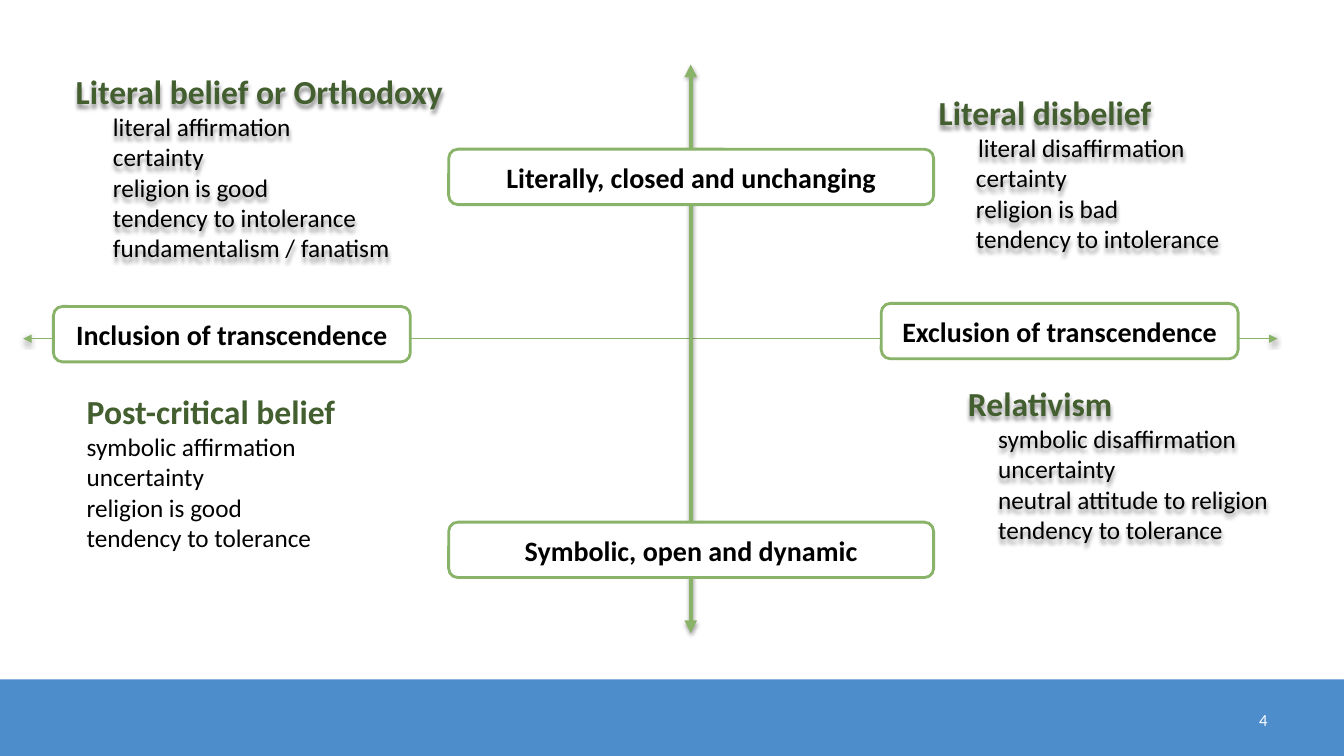
import dataclasses

import pptx
import pptx.dml.color
import pptx.enum.shapes
import pptx.enum.text
import pptx.oxml
import pptx.oxml.ns
import pptx.util

PX = 9144  # 100 px to the inch
FONT = "Calibri"
COLORS = {
    "white": "FFFFFF",
    "black": "000000",
    "bar": "4E8DCC",
    "axis": "89B368",
    "heading": "435E2F",
}
ALIGN = pptx.enum.text.PP_ALIGN
ANCHOR = pptx.enum.text.MSO_ANCHOR
SHAPE = pptx.enum.shapes.MSO_SHAPE


@dataclasses.dataclass
class Axis:
    start: tuple[int, int]
    end: tuple[int, int]
    width: float


@dataclasses.dataclass
class Pole:
    text: str
    left: int
    top: int
    width: int


@dataclasses.dataclass
class Quadrant:
    heading: str
    items: list[str]
    box: tuple[int, int, int, int]
    indents: list[int]
    anchor: ANCHOR = ANCHOR.MIDDLE
    heading_spacing: float = 1.0
    shadow: bool = True


AXES = [
    Axis((23, 336), (1267, 336), 0.75),
    Axis((685, 64), (685, 628), 3),
]
POLES = [
    Pole("Inclusion of transcendence", 53, 304, 354),
    Pole("Exclusion of transcendence", 874, 301, 354),
    Pole("Literally, closed and unchanging", 445, 148, 481),
    Pole("Symbolic, open and dynamic", 445, 518, 481),
]
QUADRANTS = [
    Quadrant(
        "Literal belief or Orthodoxy",
        ["literal affirmation", "certainty", "religion is good",
         "tendency to intolerance", "fundamentalism / fanatism"],
        (65, 78, 410, 167), [37] * 5, heading_spacing=1.2,
    ),
    Quadrant(
        "Post-critical belief",
        ["symbolic affirmation", "uncertainty", "religion is good",
         "tendency to tolerance"],
        (76, 383, 307, 172), [0] * 4, anchor=ANCHOR.TOP, shadow=False,
    ),
    Quadrant(
        "Literal disbelief",
        ["literal disaffirmation", "certainty", "religion is bad",
         "tendency to intolerance"],
        (921, 88, 384, 167), [39, 37, 37, 37],
    ),
    Quadrant(
        "Relativism",
        ["symbolic disaffirmation", "uncertainty",
         "neutral attitude to religion", "tendency to tolerance"],
        (950, 375, 379, 170), [30] * 4,
    ),
]


def rgb(name: str) -> pptx.dml.color.RGBColor:
    return pptx.dml.color.RGBColor.from_string(COLORS[name])


def add_run(p, text: str, size: int, color: str, bold: bool = False) -> None:
    r = p.add_run()
    r.text = text
    r.font.name = FONT
    r.font.size = pptx.util.Pt(size)
    r.font.bold = bold
    r.font.color.rgb = rgb(color)


def add_shadow(sp, blur: float, dist: float, alpha: int) -> None:
    """Append a soft shadow that falls straight down; blur and dist in points."""
    sp._element.spPr.append(pptx.oxml.parse_xml(
        f'<a:effectLst {pptx.oxml.ns.nsdecls("a")}>'
        f'<a:outerShdw blurRad="{pptx.util.Pt(blur)}" dist="{pptx.util.Pt(dist)}" '
        f'dir="5400000" rotWithShape="0"><a:srgbClr val="{COLORS["black"]}">'
        f'<a:alpha val="{alpha * 1000}"/></a:srgbClr></a:outerShdw></a:effectLst>'
    ))


def add_axis(s, axis: Axis) -> None:
    line = s.shapes.add_connector(
        pptx.enum.shapes.MSO_CONNECTOR.STRAIGHT,
        *(v * PX for v in axis.start + axis.end),
    )
    line.line.color.rgb = rgb("axis")
    line.line.width = pptx.util.Pt(axis.width)
    ln = line.line._get_or_add_ln()
    for end in ("headEnd", "tailEnd"):
        ln.append(pptx.oxml.parse_xml(
            f'<a:{end} {pptx.oxml.ns.nsdecls("a")} type="triangle"/>'
        ))
    add_shadow(line, 3.1, 1.7, 37)


def add_pole(s, pole: Pole) -> None:
    sp = s.shapes.add_shape(
        SHAPE.ROUNDED_RECTANGLE,
        pole.left * PX, pole.top * PX, pole.width * PX, 55 * PX,
    )
    sp.shadow.inherit = False
    sp.fill.solid()
    sp.fill.fore_color.rgb = rgb("white")
    sp.line.color.rgb = rgb("axis")
    sp.line.width = pptx.util.Pt(2)
    tf = sp.text_frame
    tf.word_wrap = True
    tf.vertical_anchor = ANCHOR.MIDDLE
    p = tf.paragraphs[0]
    p.alignment = ALIGN.CENTER
    add_run(p, pole.text, 20, "black", bold=True)


def format_list_line(p, indent: int, spacing: float = 1.0) -> None:
    p.alignment = ALIGN.LEFT
    p.line_spacing = spacing
    p.space_before = p.space_after = pptx.util.Pt(0)
    pPr = p._p.get_or_add_pPr()
    pPr.set("marL", str(indent * PX))
    pPr.set("indent", "0")
    pPr.append(pptx.oxml.parse_xml(f'<a:buNone {pptx.oxml.ns.nsdecls("a")}/>'))


def fill_quadrant(sp, quadrant: Quadrant) -> None:
    sp.left, sp.top, sp.width, sp.height = (v * PX for v in quadrant.box)
    sp.fill.background()
    if quadrant.shadow:
        add_shadow(sp, 3.1, 3, 43)
    tf = sp.text_frame
    tf.word_wrap = True
    tf.auto_size = pptx.enum.text.MSO_AUTO_SIZE.NONE
    tf.vertical_anchor = quadrant.anchor
    p = tf.paragraphs[0]
    format_list_line(p, 0, quadrant.heading_spacing)
    add_run(p, quadrant.heading, 24, "heading", bold=True)
    for item, indent in zip(quadrant.items, quadrant.indents):
        p = tf.add_paragraph()
        format_list_line(p, indent)
        add_run(p, item, 18, "black")


def add_footer(s) -> None:
    bar = s.shapes.add_shape(SHAPE.RECTANGLE, 0, 674 * PX, 1333 * PX, 76 * PX)
    bar.shadow.inherit = False
    bar.fill.solid()
    bar.fill.fore_color.rgb = rgb("bar")
    bar.line.fill.background()
    number = s.shapes.add_textbox(1190 * PX, 694 * PX, 77 * PX, 40 * PX)
    tf = number.text_frame
    tf.word_wrap = True
    tf.vertical_anchor = ANCHOR.MIDDLE
    p = tf.paragraphs[0]
    p.alignment = ALIGN.RIGHT
    add_run(p, "4", 12, "white")


def main() -> None:
    prs = pptx.Presentation()
    prs.slide_width, prs.slide_height = 1333 * PX, 750 * PX
    s = prs.slides.add_slide(prs.slide_layouts.get_by_name("Comparison"))
    title, *bodies = s.placeholders
    title._element.getparent().remove(title._element)
    add_footer(s)
    for axis in AXES:
        add_axis(s, axis)
    for pole in POLES:
        add_pole(s, pole)
    for body, quadrant in zip(bodies, QUADRANTS):
        fill_quadrant(body, quadrant)
    prs.save("out.pptx")


if __name__ == "__main__":
    main()
